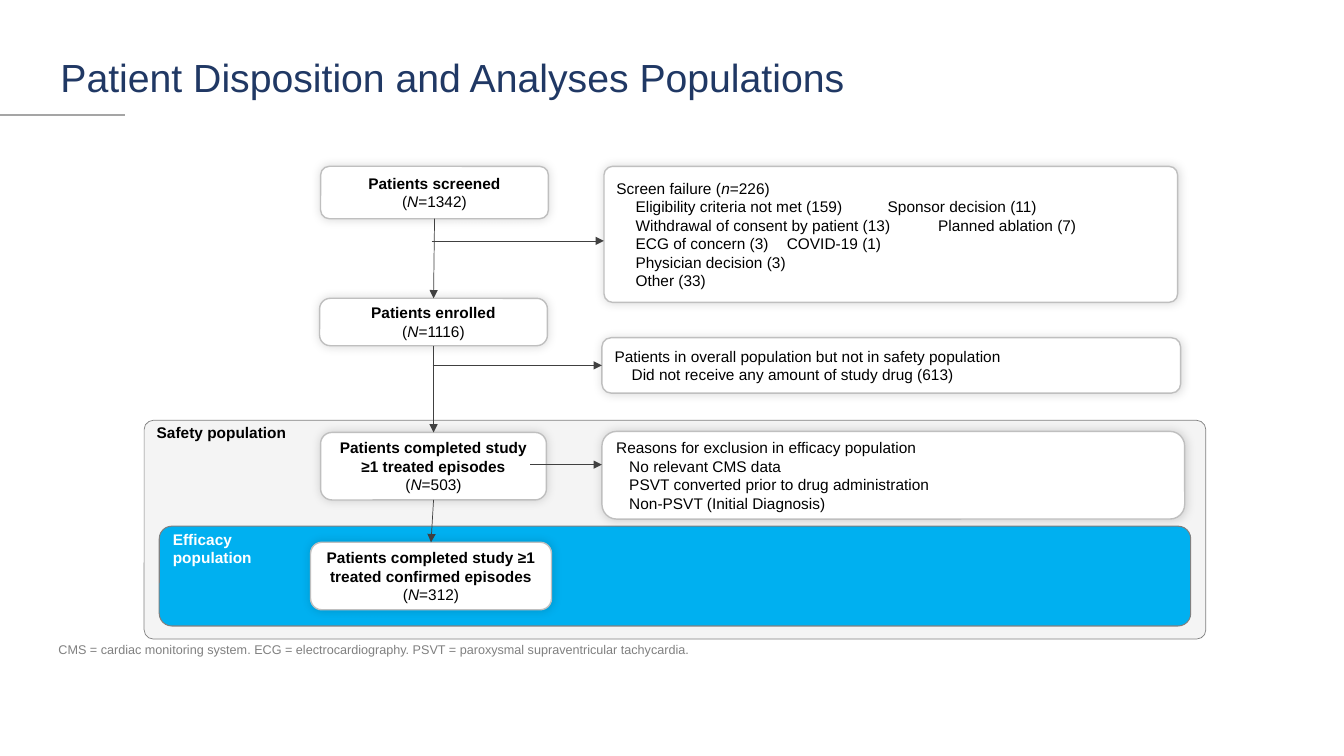
from lxml import etree
from pptx import Presentation
from pptx import util as u
from pptx.dml.color import RGBColor
from pptx.enum import shapes, text
from pptx.oxml import ns

CELL = u.Inches(0.1)  # one column or row of the layout grid
FONT = "Arial"
BLACK, WHITE, GREY = "000000", "FFFFFF", "808080"
MIDDLE, TOP, BOTTOM = text.MSO_ANCHOR.MIDDLE, text.MSO_ANCHOR.TOP, text.MSO_ANCHOR.BOTTOM


def cells(*counts):
    return [round(count * CELL) for count in counts]


def paint(color_format, hex_color):
    color_format.rgb = RGBColor.from_string(hex_color)


def add_element(parent, tag, **attributes):
    element = etree.SubElement(parent, ns.qn(tag))
    for name, value in attributes.items():
        element.set(name, str(value))
    return element


def style_font(font, size, color, bold=False, italic=False):
    font.name, font.size = FONT, u.Pt(size)
    font.bold, font.italic = bold, italic
    paint(font.color, color)


def prepare_frame(shape, anchor, margins=(0.1, 0.05)):
    frame = shape.text_frame
    frame.word_wrap = True
    frame.vertical_anchor = anchor
    frame.margin_left = frame.margin_right = u.Inches(margins[0])
    frame.margin_top = frame.margin_bottom = u.Inches(margins[1])
    return frame


def add_panel(slide, box, corner, fill, line, width):
    panel = slide.shapes.add_shape(shapes.MSO_SHAPE.ROUNDED_RECTANGLE, *cells(*box))
    panel.adjustments[0] = corner
    panel.shadow.inherit = False
    panel.fill.solid()
    paint(panel.fill.fore_color, fill)
    paint(panel.line.color, line)
    panel.line.width = u.Pt(width)
    return panel


def add_card(slide, box, corner=0.167):
    """White rounded box with a soft glow-like shadow."""
    card = add_panel(slide, box, corner, WHITE, "BFBFBF", 1)
    effects = card.element.spPr.find(ns.qn("a:effectLst"))
    shadow = add_element(effects, "a:outerShdw", blurRad=u.Pt(7), dist=0, dir=0)
    color = add_element(shadow, "a:srgbClr", val=BLACK)
    add_element(color, "a:alpha", val=14000)
    return card


def add_line(slide, start, end, color, width, arrow=True):
    line = slide.shapes.add_connector(shapes.MSO_CONNECTOR.STRAIGHT,
                                      *cells(*start, *end))
    paint(line.line.color, color)
    line.line.width = u.Pt(width)
    if arrow:
        add_element(line.line._get_or_add_ln(), "a:tailEnd", type="triangle")
    add_element(line.element.spPr, "a:effectLst")
    return line


def add_label(slide, box, wording, size, color, spacing=1.0):
    frame = prepare_frame(slide.shapes.add_textbox(*cells(*box)), BOTTOM, (0, 0))
    paragraph = frame.paragraphs[0]
    paragraph.text = wording
    paragraph.line_spacing = spacing
    style_font(paragraph.runs[0].font, size, color)


def draw_header(slide, left, top):
    add_line(slide, (0, top + 5.4), (12.4, top + 5.4), "A5A5A5", 1.5, arrow=False)
    add_label(slide, (left, top, 121, 4), "Patient Disposition and Analyses Populations",
              28, "203864", 0.9)


def draw_populations(slide, left, top, width, height):
    """Safety panel with the efficacy panel nested in its lower half."""
    safety = add_panel(slide, (left, top, width, height), 0.042, "F2F2F2", GREY, 0.5)
    fill_color = safety.element.spPr.find(".//" + ns.qn("a:srgbClr"))
    add_element(fill_color, "a:alpha", val=82000)
    efficacy = add_panel(slide, (left + 1.5, top + 10.5, width - 3, 9.9),
                         0.126, "00B0F0", GREY, 0.75)
    for panel, name, color in ((safety, "Safety population", BLACK),
                               (efficacy, "Efficacy\vpopulation", WHITE)):
        paragraph = prepare_frame(panel, TOP, (0.1, 0)).paragraphs[0]
        paragraph.text = name
        paragraph.alignment = text.PP_ALIGN.LEFT
        for run in paragraph.runs:
            style_font(run.font, 11, color, bold=True)


def draw_flow(slide, left, top):
    """Column of patient counts joined by downward arrows."""
    steps = [
        ("Patients screened", 1342, (1, 0, 22.6, 5.2), 0.167),
        ("Patients enrolled", 1116, (0.9, 13.1, 22.6, 4.7), 0.226),
        ("Patients completed study ≥1 treated episodes", 503, (1, 26.4, 22.4, 6.7), 0.167),
        ("Patients completed study ≥1 treated confirmed episodes", 312,
         (0, 37.3, 23.9, 6.7), 0.167),
    ]
    cards = []
    for name, count, (column, row, width, height), corner in steps:
        card = add_card(slide, (left + column, top + row, width, height), corner)
        frame = prepare_frame(card, MIDDLE, (0.1, 0))
        frame.text = f"{name}\n("
        title, total = frame.paragraphs
        style_font(title.runs[0].font, 11, BLACK, bold=True)
        for piece in ("N", f"={count})"):
            total.add_run().text = piece
        for run in total.runs:
            style_font(run.font, 11, BLACK, italic=run.text == "N")
        for paragraph in frame.paragraphs:
            paragraph.alignment = text.PP_ALIGN.CENTER
        cards.append(card)
    for upper, lower in zip(cards, cards[1:]):
        arrow = add_line(slide, (left, top), (left, top), "404040", 0.5)
        arrow.begin_connect(upper, 2)
        arrow.end_connect(lower, 0)


def add_note(slide, box, corner, indent, heading, items):
    """Card with a heading, given as runs, and indented items."""
    card = add_card(slide, box, corner)
    frame = prepare_frame(card, MIDDLE)
    frame.text = "\n".join(["".join(heading), *items])
    first, *rest = frame.paragraphs
    first.text = heading[0]
    for piece in heading[1:]:
        first.add_run().text = piece
    for paragraph in rest:
        properties = paragraph._p.get_or_add_pPr()
        properties.set("marL", str(u.Inches(indent)))
        properties.set("indent", "0")
        tabs = add_element(properties, "a:tabLst")
        add_element(tabs, "a:tab", pos=u.Inches(2.95), algn="l")
    for paragraph in frame.paragraphs:
        paragraph.alignment = text.PP_ALIGN.LEFT
        for run in paragraph.runs:
            style_font(run.font, 11, BLACK, italic=run.text == "n")
    return card


def draw_notes(slide, left, top):
    """Reasons for leaving the flow, each with an arrow from the flow column."""
    add_note(slide, (left + 0.2, top, 56.9, 13.5), 0.064, 0.19,
             ["Screen failure (", "n", "=226)"],
             ["Eligibility criteria not met (159)\tSponsor decision (11)",
              "Withdrawal of consent by patient (13)\tPlanned ablation (7)",
              "ECG of concern (3)\tCOVID-19 (1)",
              "Physician decision (3)",
              "Other (33)"])
    not_treated = add_note(slide, (left, top + 17, 57.4, 5.5), 0.167, 0.17,
                           ["Patients in overall population but not in safety population"],
                           ["Did not receive any amount of study drug (613)"])
    add_note(slide, (left, top + 26.3, 57.8, 8.7), 0.167, 0.13,
             ["Reasons for exclusion in efficacy population"],
             ["No relevant CMS data",
              "PSVT converted prior to drug administration",
              "Non-PSVT (Initial Diagnosis)"])
    for start, end, row, target in ((-16.9, 0.2, 7.4, None),
                                    (-16.8, 0, 19.75, not_treated),
                                    (-7.1, 0, 29.6, None)):
        arrow = add_line(slide, (left + start, top + row), (left + end, top + row),
                         "404040", 0.5)
        if target is not None:
            arrow.end_connect(target, 1)


def main():
    presentation = Presentation()
    presentation.slide_width, presentation.slide_height = u.Inches(13.33), u.Inches(7.5)
    slide = presentation.slides.add_slide(presentation.slide_layouts[6])
    draw_header(slide, 6, 6)
    draw_populations(slide, 14.3, 41.7, 105.3, 21.7)
    draw_flow(slide, 30.8, 16.5)
    draw_notes(slide, 59.7, 16.5)
    add_label(slide, (5.8, 60.9, 121.2, 4.3),
              "CMS = cardiac monitoring system. ECG = electrocardiography. "
              "PSVT = paroxysmal supraventricular tachycardia.", 9, GREY)
    presentation.save("out.pptx")


if __name__ == "__main__":
    main()
